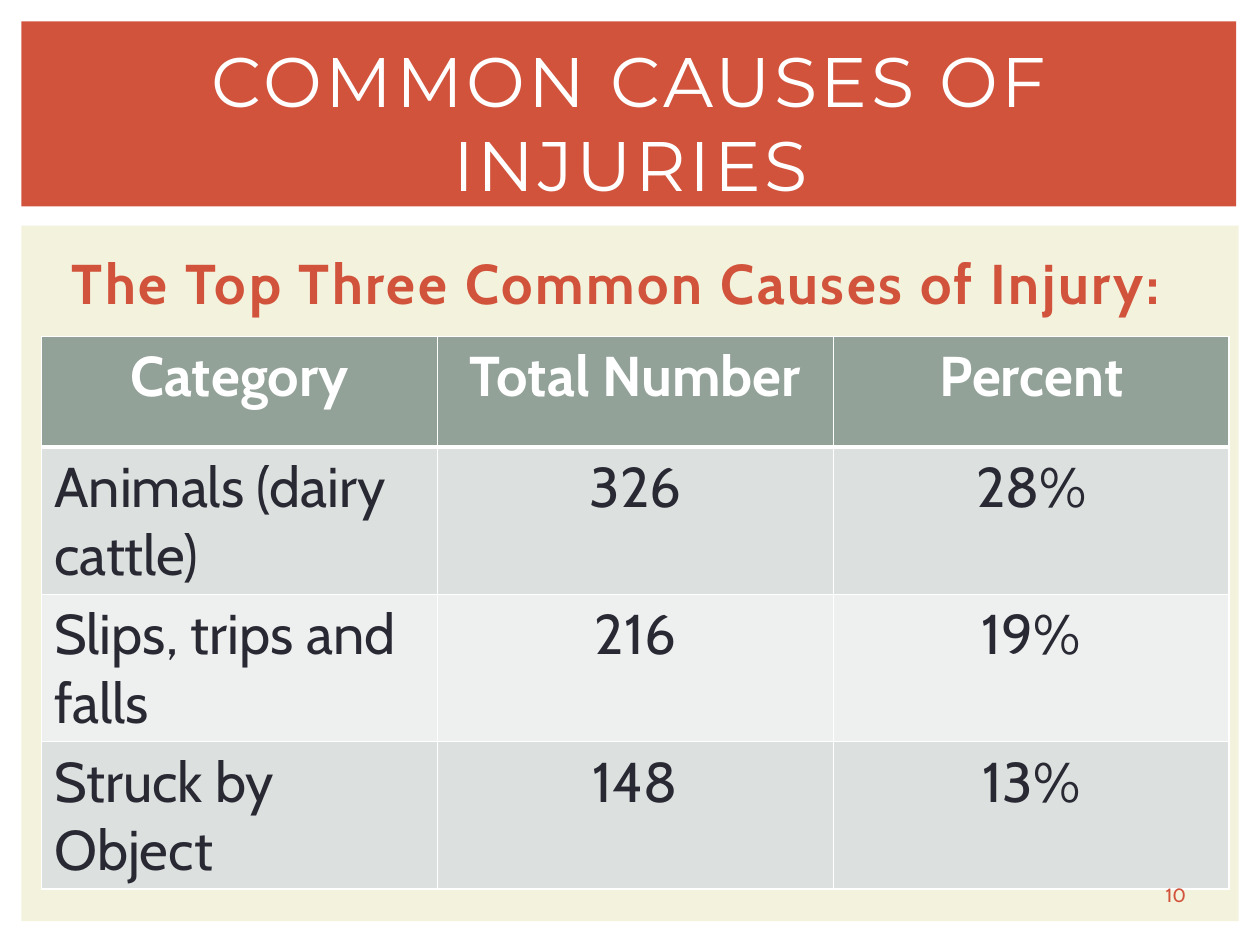
import pptx
import pptx.dml.color
import pptx.enum.shapes
import pptx.enum.text
import pptx.oxml
import pptx.oxml.ns
import pptx.util
from pptx.util import Cm

RED, CREAM, WHITE, INK = "D2533C", "F3F2DC", "FFFFFF", "292934"
HEADER_FILL, BAND_FILLS = "93A299", ("DCE0DE", "EEF0EF")
CENTER = pptx.enum.text.PP_ALIGN.CENTER
LEFT = pptx.enum.text.PP_ALIGN.LEFT
MIDDLE = pptx.enum.text.MSO_ANCHOR.MIDDLE
TOP = pptx.enum.text.MSO_ANCHOR.TOP

INJURIES = [
    ("Category", "Total Number", "Percent"),
    ("Animals (dairy cattle)", "326", "28%"),
    ("Slips, trips and falls", "216", "19%"),
    ("Struck by Object", "148", "13%"),
]


def color(hex_code):
    return pptx.dml.color.RGBColor.from_string(hex_code)


def write(frame, text, size, hex_code, font="Cabin", bold=False,
          align=CENTER, tracking=0):
    """Set one paragraph of text; tracking is letter spacing in points."""
    frame.text = text
    frame.word_wrap = True
    paragraph = frame.paragraphs[0]
    paragraph.alignment = align
    for run in paragraph.runs:
        run.font.name = font
        run.font.size = pptx.util.Pt(size)
        run.font.bold = bold
        run.font.color.rgb = color(hex_code)
        if tracking:
            run.font._element.set("spc", str(int(tracking * 100)))


def add_panel(slide, left, top, width, height, hex_code):
    panel = slide.shapes.add_shape(
        pptx.enum.shapes.MSO_SHAPE.RECTANGLE, left, top, width, height)
    panel.shadow.inherit = False
    panel.fill.solid()
    panel.fill.fore_color.rgb = color(hex_code)
    panel.line.fill.background()


def place_title(slide, text):
    title = slide.shapes.title
    title.left, title.top = Cm(1.07), Cm(0.99)
    title.width, title.height = Cm(23.29), Cm(2.92)
    write(title.text_frame, text, 40, WHITE, font="Montserrat", tracking=2)
    title.text_frame.vertical_anchor = MIDDLE
    # Bring the title in front of the panels
    slide.shapes._spTree.append(title._element)


def add_label(slide, left, top, width, height, text, size, anchor, **style):
    label = slide.shapes.add_textbox(left, top, width, height)
    write(label.text_frame, text, size, RED, **style)
    label.text_frame.vertical_anchor = anchor
    return label


def set_borders(cell, top, bottom):
    """Draw white cell borders; top and bottom widths are in points."""
    properties = cell._tc.get_or_add_tcPr()
    for side, width in (("L", 1), ("R", 1), ("T", top), ("B", bottom)):
        properties.append(pptx.oxml.parse_xml(
            f'<a:ln{side} {pptx.oxml.ns.nsdecls("a")} w="{pptx.util.Pt(width)}">'
            f'<a:solidFill><a:srgbClr val="{WHITE}"/></a:solidFill></a:ln{side}>'))


def add_injury_table(slide):
    header_height, row_height, column_width = Cm(2.23), Cm(2.97), Cm(7.98)
    table = slide.shapes.add_table(
        len(INJURIES), len(INJURIES[0]), Cm(0.84), Cm(6.78),
        column_width * 3, header_height + row_height * 3).table
    for column in table.columns:
        column.width = column_width
    for r, values in enumerate(INJURIES):
        is_header = r == 0
        table.rows[r].height = header_height if is_header else row_height
        for c, value in enumerate(values):
            cell = table.cell(r, c)
            set_borders(cell, top=3 if r == 1 else 1,
                        bottom=3 if is_header else 1)
            cell.fill.solid()
            cell.fill.fore_color.rgb = color(
                HEADER_FILL if is_header else BAND_FILLS[(r - 1) % 2])
            write(cell.text_frame, value, 32, WHITE if is_header else INK,
                  bold=is_header,
                  align=CENTER if is_header or c > 0 else LEFT)


def main():
    deck = pptx.Presentation()
    deck.slide_width, deck.slide_height = Cm(25.4), Cm(19.05)
    slide = deck.slides.add_slide(deck.slide_layouts[5])

    # Content panel and title band
    add_panel(slide, Cm(0.43), Cm(4.55), Cm(24.54), Cm(14.02), CREAM)
    add_panel(slide, Cm(0.43), Cm(0.43), Cm(24.49), Cm(3.73), RED)
    place_title(slide, "COMMON CAUSES OF INJURIES")

    # Subheading
    subheading = add_label(
        slide, Cm(1.07), Cm(4.88), Cm(23.34), Cm(12.24),
        "The Top Three Common Causes of Injury:", 32, TOP,
        bold=True, align=LEFT, tracking=1.5)
    subheading.text_frame.margin_left = Cm(0.38)

    add_injury_table(slide)

    # Slide number
    add_label(slide, Cm(22.89), Cm(17.65), Cm(1.63), Cm(0.76), "10", 11, MIDDLE)

    deck.save("out.pptx")


if __name__ == "__main__":
    main()
